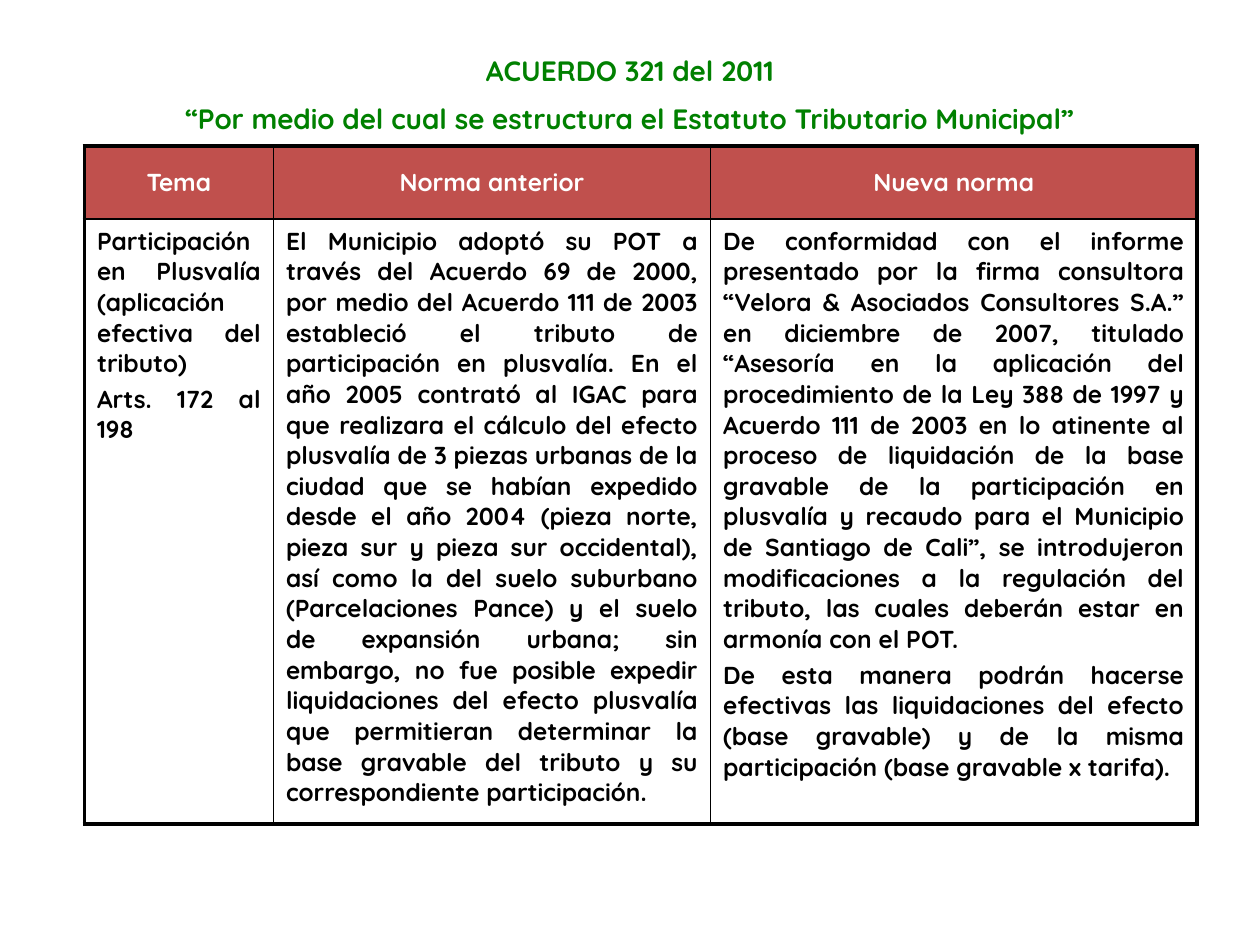
from lxml import etree
from pptx import Presentation
from pptx import util as u
from pptx.dml.color import RGBColor
from pptx.enum import text
from pptx.oxml import ns

GREEN = RGBColor(0x00, 0x80, 0x00)
RED = RGBColor(0xC0, 0x50, 0x4D)
WHITE = RGBColor(0xFF, 0xFF, 0xFF)
BLACK = RGBColor(0x00, 0x00, 0x00)

TITLE = [
    "ACUERDO 321 del 2011",
    "“Por medio del cual se estructura el Estatuto Tributario Municipal”",
]
HEADERS = ["Tema", "Norma anterior", "Nueva norma"]
TOPIC = [
    "Participación en Plusvalía (aplicación efectiva del tributo)",
    "Arts. 172 al 198",
]
OLD_RULE = [
    "El Municipio adoptó su POT a través del Acuerdo 69 de 2000, por medio del "
    "Acuerdo 111 de 2003 estableció el tributo de participación en plusvalía. En el "
    "año 2005 contrató al IGAC para que realizara el cálculo del efecto plusvalía de "
    "3 piezas urbanas de la ciudad que se habían expedido desde el año 2004 (pieza "
    "norte, pieza sur y pieza sur occidental), así como la del suelo suburbano "
    "(Parcelaciones Pance) y el suelo de expansión urbana; sin embargo, no fue "
    "posible expedir liquidaciones del efecto plusvalía que permitieran determinar "
    "la base gravable del tributo y su correspondiente participación.",
]
NEW_RULE = [
    "De conformidad con el informe presentado por la firma consultora “Velora & "
    "Asociados Consultores S.A.” en diciembre de 2007, titulado “Asesoría en la "
    "aplicación del procedimiento de la Ley 388 de 1997 y Acuerdo 111 de 2003 en lo "
    "atinente al proceso de liquidación de la base gravable de la participación en "
    "plusvalía y recaudo para el Municipio de Santiago de Cali”, se introdujeron "
    "modificaciones a la regulación del tributo, las cuales deberán estar en armonía "
    "con el POT.",
    "De esta manera podrán hacerse efectivas las liquidaciones del efecto (base "
    "gravable) y de la misma participación (base gravable x tarifa).",
]


class Deck:
    """Holds the style and the current slide; lengths are shares of the slide."""
    font = "Quicksand"
    outer, inner = 2.25, 1

    def __init__(self, width, height):
        self.prs = Presentation()
        self.prs.slide_width = u.Inches(width)
        self.prs.slide_height = u.Inches(height)
        self.s = self.prs.slides.add_slide(self.prs.slide_layouts[6])

    def x(self, share):
        return round(self.prs.slide_width * share)

    def y(self, share):
        return round(self.prs.slide_height * share)

    def fill_text(self, tf, lines, size, color, align, gap):
        """Fill a text frame; gap is the space between paragraphs in points."""
        tf.word_wrap = True
        tf.text = "\n".join(lines)
        for i, p in enumerate(tf.paragraphs):
            p.alignment = align
            p.space_before = u.Pt(gap if i else 0)
            for r in p.runs:
                r.font.name = self.font
                r.font.size = u.Pt(size)
                r.font.bold = True
                r.font.color.rgb = color

    def title(self, lines, left, top, width, height):
        sp = self.s.shapes.add_textbox(
            self.x(left), self.y(top), self.x(width), self.y(height))
        self.fill_text(sp.text_frame, lines, 16, GREEN, text.PP_ALIGN.CENTER, 8)

    def borders(self, cell, **widths):
        """Draw the cell's edges; keys are L, R, T, B and values are points."""
        tc_pr = cell._tc.get_or_add_tcPr()
        for i, (side, width) in enumerate(widths.items()):
            ln = etree.Element(ns.qn(f"a:ln{side}"), w=str(u.Pt(width)))
            fill = etree.SubElement(ln, ns.qn("a:solidFill"))
            etree.SubElement(fill, ns.qn("a:srgbClr"), val=str(BLACK))
            tc_pr.insert(i, ln)

    def table(self, rows, left, top, widths, heights):
        """Build a table whose first row is the header."""
        n_rows, n_cols = len(heights), len(widths)
        table = self.s.shapes.add_table(
            n_rows, n_cols, self.x(left), self.y(top),
            self.x(sum(widths)), self.y(sum(heights))).table
        table.first_row = table.horz_banding = False
        for column, width in zip(table.columns, widths):
            column.width = self.x(width)
        for row, height in zip(table.rows, heights):
            row.height = self.y(height)

        for i, row in enumerate(rows):
            for j, lines in enumerate(row):
                cell = table.cell(i, j)
                if i == 0:
                    cell.fill.solid()
                    cell.fill.fore_color.rgb = RED
                    cell.vertical_anchor = text.MSO_ANCHOR.MIDDLE
                    color, align = WHITE, text.PP_ALIGN.CENTER
                else:
                    cell.fill.background()
                    color, align = BLACK, text.PP_ALIGN.JUSTIFY
                self.fill_text(cell.text_frame, lines, 14, color, align, 2.8)
                edges = {"L": j == 0, "R": j == n_cols - 1,
                         "T": i == 0, "B": i == n_rows - 1}
                self.borders(cell, **{side: self.outer if edge else self.inner
                                      for side, edge in edges.items()})


def main():
    width, height = 10, 7.5
    deck = Deck(width, height)
    deck.table(
        [[[header] for header in HEADERS], [TOPIC, OLD_RULE, NEW_RULE]],
        0.67 / width, 1.16 / height,
        [w / width for w in (1.5, 3.47, 3.86)],
        [h / height for h in (0.58, 4.8)])
    deck.title(TITLE, 0, 0.38 / height, 1, 0.77 / height)
    deck.prs.save("out.pptx")


if __name__ == "__main__":
    main()
